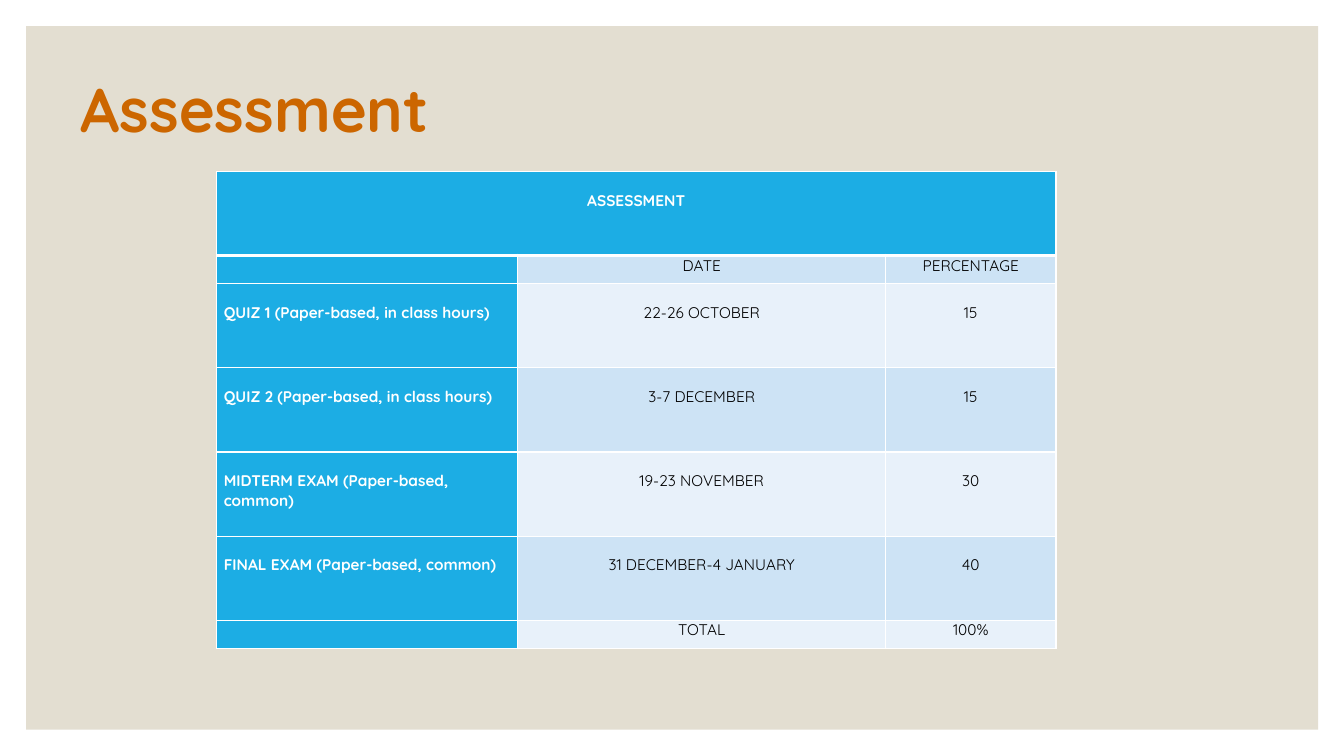
import pptx
import pptx.dml.color
import pptx.enum.shapes
import pptx.enum.text
import pptx.oxml.xmlchemy
import pptx.util
from pptx.util import Cm

FONT = "Quicksand"
WHITE, BLACK, SAND, ORANGE = "FFFFFF", "000000", "E3DED1", "CC6600"
BLUE, BAND_DARK, BAND_LIGHT = "1CADE4", "CDE3F5", "E8F1FA"
LEFT, CENTER = pptx.enum.text.PP_ALIGN.LEFT, pptx.enum.text.PP_ALIGN.CENTER
LINE = pptx.util.Pt(13.75)
TALL, SHORT = 2.12, 0.71
COLUMN_WIDTHS = (7.59, 9.27, 4.29)
ASSESSMENTS = [
    ("ASSESSMENT", "", ""),
    ("", "DATE", "PERCENTAGE"),
    ("QUIZ 1 (Paper-based, in class hours)", "22-26 OCTOBER", "15"),
    ("QUIZ 2 (Paper-based, in class hours)", "3-7 DECEMBER", "15"),
    ("MIDTERM EXAM (Paper-based, common)", "19-23 NOVEMBER", "30"),
    ("FINAL EXAM (Paper-based, common)", "31 DECEMBER-4 JANUARY", "40"),
    ("", "TOTAL", "100%"),
]


def rgb(value):
    return pptx.dml.color.RGBColor.from_string(value)


def add_text(paragraph, text, size, color, bold):
    run = paragraph.add_run()
    run.text = text
    run.font.name = FONT
    run.font.size = pptx.util.Pt(size)
    run.font.bold = bold
    run.font.color.rgb = rgb(color)


def add_child(parent, tag, **attributes):
    child = pptx.oxml.xmlchemy.OxmlElement(tag)
    for name, value in attributes.items():
        child.set(name, str(value))
    parent.append(child)
    return child


def add_panel(slide):
    panel = slide.shapes.add_shape(
        pptx.enum.shapes.MSO_SHAPE.RECTANGLE, Cm(0.66), Cm(0.66), Cm(32.56), Cm(17.73))
    panel.shadow.inherit = False
    panel.fill.solid()
    panel.fill.fore_color.rgb = rgb(SAND)
    panel.line.fill.background()


def add_title(slide):
    title = slide.shapes.add_textbox(Cm(1.78), Cm(1.35), Cm(29.13), Cm(2.97)).text_frame
    title.word_wrap = True
    title.vertical_anchor = pptx.enum.text.MSO_ANCHOR.MIDDLE
    title.paragraphs[0].line_spacing = 0.9
    add_text(title.paragraphs[0], "Assessment", 44, ORANGE, True)


def add_borders(cell, top, bottom):
    properties = cell._tc.get_or_add_tcPr()
    for side, points in (("L", 1), ("R", 1), ("T", top), ("B", bottom)):
        border = add_child(properties, f"a:ln{side}", w=pptx.util.Pt(points))
        add_child(add_child(border, "a:solidFill"), "a:srgbClr", val=WHITE)


def style_cell(cell, row, column, text, tall):
    # The rule below the heading row is thicker than the others
    add_borders(cell, top=3 if row == 1 else 1, bottom=3 if row == 0 else 1)
    heading = row == 0 or column == 0
    band = BAND_DARK if row % 2 else BAND_LIGHT
    cell.fill.solid()
    cell.fill.fore_color.rgb = rgb(BLUE if heading else band)
    cell.margin_left = cell.margin_right = Cm(0.18)
    cell.margin_top = LINE if tall else 0
    cell.margin_bottom = 0

    paragraph = cell.text_frame.paragraphs[0]
    paragraph.alignment = LEFT if column == 0 and row else CENTER
    if text:
        add_text(paragraph, text, 11, WHITE if heading else BLACK, heading)
    else:
        # Keeps an empty cell from stretching its row
        add_child(paragraph._p, "a:endParaRPr", sz=1100)


def add_assessment_table(slide):
    heights = [SHORT if row in (1, len(ASSESSMENTS) - 1) else TALL
               for row in range(len(ASSESSMENTS))]
    table = slide.shapes.add_table(
        len(ASSESSMENTS), len(COLUMN_WIDTHS), Cm(5.46), Cm(4.32),
        Cm(sum(COLUMN_WIDTHS)), Cm(sum(heights))).table
    for column, width in enumerate(COLUMN_WIDTHS):
        table.columns[column].width = Cm(width)
    for row, texts in enumerate(ASSESSMENTS):
        table.rows[row].height = Cm(heights[row])
        for column, text in enumerate(texts):
            style_cell(table.cell(row, column), row, column, text, heights[row] == TALL)
    table.cell(0, 0).merge(table.cell(0, len(COLUMN_WIDTHS) - 1))


def main():
    presentation = pptx.Presentation()
    presentation.slide_width = Cm(33.87)
    presentation.slide_height = Cm(19.05)
    slide = presentation.slides.add_slide(presentation.slide_layouts[6])
    add_panel(slide)
    add_title(slide)
    add_assessment_table(slide)
    presentation.save("out.pptx")


if __name__ == "__main__":
    main()
